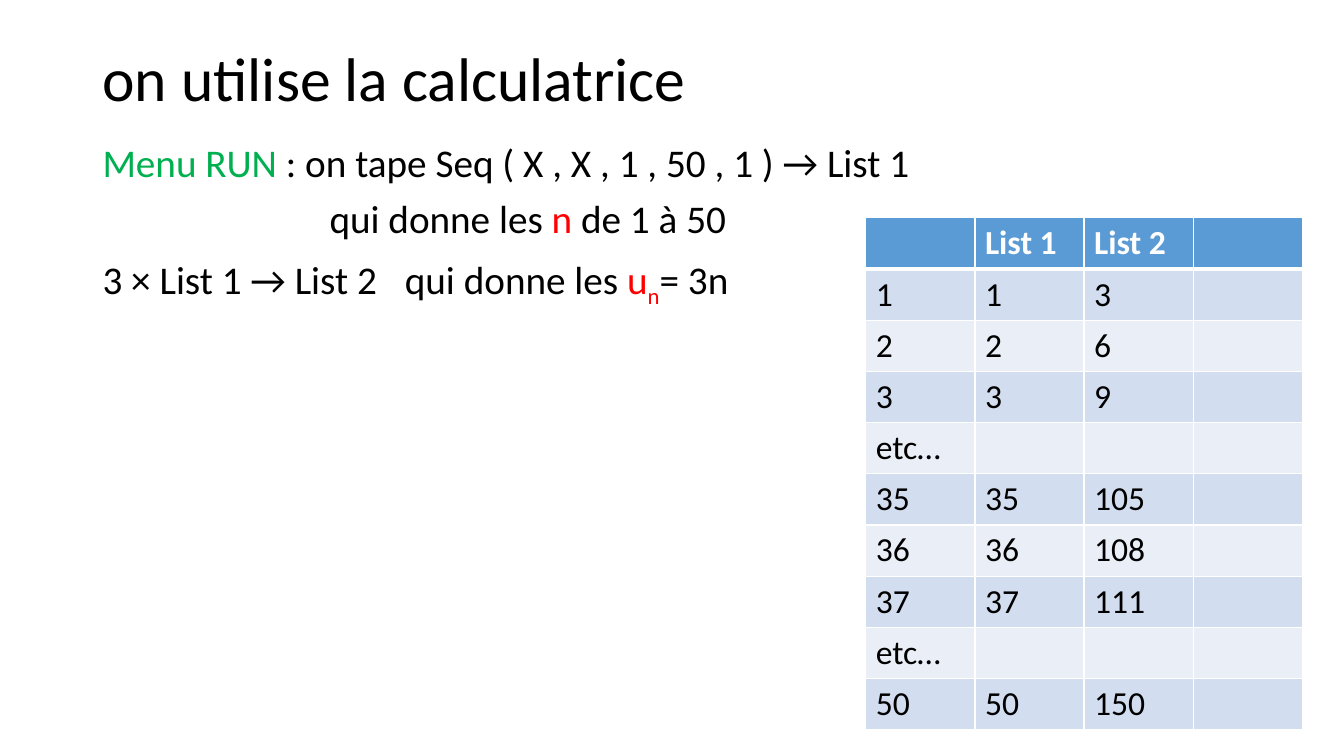
from dataclasses import dataclass

from pptx import Presentation
from pptx.dml.color import RGBColor
from pptx.enum.text import MSO_ANCHOR as Anchor, MSO_AUTO_SIZE as AutoSize, PP_ALIGN as Align
from pptx.oxml import parse_xml
from pptx.oxml.ns import nsdecls
from pptx.util import Cm, Pt


@dataclass(frozen=True)
class Theme:
    font: str = "Calibri"
    black: str = "000000"
    white: str = "FFFFFF"
    green: str = "00B050"
    red: str = "FF0000"
    header: str = "5B9BD5"
    bands: tuple = ("D2DEEF", "EAEFF7")
    title_size: int = 44
    body_size: int = 28
    table_size: int = 24
    border: int = 1
    header_border: int = 3


THEME = Theme()

TITLE = "on utilise la calculatrice"
STEPS = [
    {"indent": 0, "runs": [
        ("Menu RUN ", {"color": THEME.green}),
        (": on tape Seq ( X , X , 1 , 50 , 1 ) → List 1", {}),
    ]},
    {"indent": 5.72, "runs": [
        ("qui donne les ", {}),
        ("n", {"color": THEME.red}),
        (" de 1 à 50", {}),
    ]},
    {"indent": 0, "tab": 8.92, "runs": [
        ("3 × List 1 → List 2\tqui donne les ", {}),
        ("u", {"color": THEME.red}),
        ("n", {"color": THEME.red, "baseline": -25000}),
        ("= 3n", {}),
    ]},
]
HEADER = ("", "List 1", "List 2", "")
RANKS = (1, 2, 3, None, 35, 36, 37, None, 50)
ROWS = [HEADER] + [
    (str(n), str(n), str(3 * n), "") if n else ("etc…", "", "", "")
    for n in RANKS
]

TITLE_BOX = (Cm(2.33), Cm(1.02), Cm(29.21), Cm(2.08))
BODY_BOX = (Cm(2.33), Cm(3.48), Cm(29.21), Cm(13.67))
TABLE_LEFT, TABLE_TOP = Cm(21.82), Cm(5.49)
COLUMN_WIDTH, ROW_HEIGHT = Cm(2.75), Cm(1.29)


def add_text(paragraph, text, size=THEME.body_size, color=THEME.black, bold=False, baseline=0):
    run = paragraph.add_run()
    run.text = text
    font = run.font
    font.name, font.size, font.bold = THEME.font, Pt(size), bold
    font.color.rgb = RGBColor.from_string(color)
    if baseline:
        run._r.get_or_add_rPr().set("baseline", str(baseline))


def place(shape, box, anchor):
    shape.left, shape.top, shape.width, shape.height = box
    frame = shape.text_frame
    frame.word_wrap = True
    frame.auto_size = AutoSize.NONE
    frame.vertical_anchor = anchor
    return frame


def format_step(paragraph, indent, tab=None):
    paragraph.alignment = Align.LEFT
    paragraph.line_spacing = 0.9
    paragraph.space_before = Pt(10)
    properties = paragraph._p.get_or_add_pPr()
    properties.set("marL", str(Cm(indent)))
    properties.set("indent", "0")
    properties.append(parse_xml(f"<a:buNone {nsdecls('a')}/>"))
    if tab:
        properties.append(parse_xml(
            f'<a:tabLst {nsdecls("a")}><a:tab pos="{Cm(tab)}" algn="l"/></a:tabLst>'))


def set_borders(cell, row):
    widths = {
        "L": THEME.border,
        "R": THEME.border,
        "T": THEME.header_border if row == 1 else THEME.border,
        "B": THEME.header_border if row == 0 else THEME.border,
    }
    for side, width in widths.items():
        cell._tc.get_or_add_tcPr().append(parse_xml(
            f'<a:ln{side} {nsdecls("a")} w="{Pt(width)}"><a:solidFill>'
            f'<a:srgbClr val="{THEME.white}"/></a:solidFill></a:ln{side}>'))


def add_value_table(slide):
    table = slide.shapes.add_table(
        len(ROWS), len(HEADER), TABLE_LEFT, TABLE_TOP,
        COLUMN_WIDTH * len(HEADER), ROW_HEIGHT * len(ROWS)).table
    for row, values in enumerate(ROWS):
        is_header = row == 0
        fill = THEME.header if is_header else THEME.bands[(row - 1) % 2]
        for column, value in enumerate(values):
            cell = table.cell(row, column)
            set_borders(cell, row)
            cell.fill.solid()
            cell.fill.fore_color.rgb = RGBColor.from_string(fill)
            if value:
                add_text(cell.text_frame.paragraphs[0], value, size=THEME.table_size,
                         color=THEME.white if is_header else THEME.black, bold=is_header)


def main():
    presentation = Presentation()
    presentation.slide_width, presentation.slide_height = Cm(33.87), Cm(19.05)
    slide = presentation.slides.add_slide(presentation.slide_layouts[1])

    title = place(slide.shapes.title, TITLE_BOX, Anchor.MIDDLE).paragraphs[0]
    title.alignment = Align.LEFT
    title.line_spacing = 0.9
    add_text(title, TITLE, size=THEME.title_size)

    body = place(slide.placeholders[1], BODY_BOX, Anchor.TOP)
    for index, step in enumerate(STEPS):
        paragraph = body.add_paragraph() if index else body.paragraphs[0]
        format_step(paragraph, step["indent"], step.get("tab"))
        for text, style in step["runs"]:
            add_text(paragraph, text, **style)

    add_value_table(slide)
    presentation.save("out.pptx")


if __name__ == "__main__":
    main()
